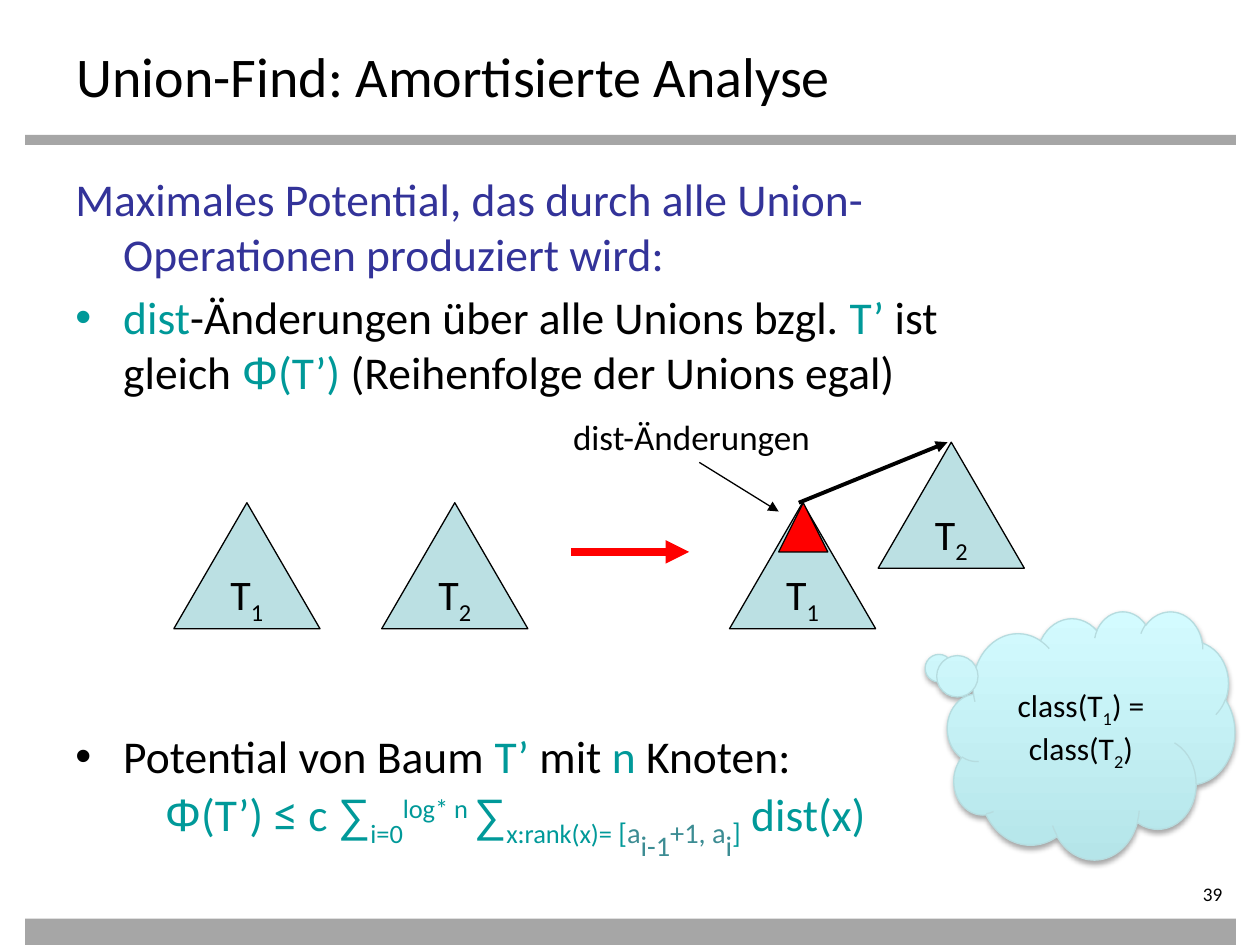
"""Build the union-find slide on amortised analysis."""
from lxml.etree import SubElement
from pptx import Presentation
from pptx.dml.color import RGBColor
from pptx.enum.shapes import MSO_CONNECTOR, MSO_SHAPE
from pptx.enum.text import MSO_ANCHOR, PP_ALIGN
from pptx.oxml import parse_xml
from pptx.oxml.ns import nsdecls, qn
from pptx.util import Inches, Pt

BLACK, TEAL, BLUE, GREY = "000000", "009999", "333399", "A6A6A6"
PALE, RED, SLATE = "BBE0E3", "FF0000", "3C8C93"


def rgb(value):
    return RGBColor.from_string(value)


def add_runs(p, runs, **base):
    for text, changes in runs:
        fmt = {"name": "Calibri", "size": 26, "color": BLACK, "baseline": 0} | base | changes
        r = p.add_run()
        r.text = text
        r.font.color.rgb = rgb(fmt.pop("color"))
        baseline = fmt.pop("baseline")
        if baseline:
            r._r.get_or_add_rPr().set("baseline", str(baseline * 1000))
        fmt["size"] = Pt(fmt["size"])
        for key, value in fmt.items():
            setattr(r.font, key, value)


prs = Presentation()
prs.slide_width, prs.slide_height = Inches(10), Inches(7.5)
s = prs.slides.add_slide(prs.slide_layouts[6])

for top, height in ((1.07, 0.08), (7.29, 0.21)):
    sp = s.shapes.add_shape(MSO_SHAPE.RECTANGLE, Inches(0.2), Inches(top), Inches(9.61), Inches(height))
    sp.shadow.inherit = False
    sp.fill.solid()
    sp.fill.fore_color.rgb = rgb(GREY)
    sp.line.fill.background()

teal, sub = {"color": TEAL}, {"baseline": -25}
symbol = teal | {"name": "Arial"}
small = teal | sub | {"size": 28}
index = small | {"color": SLATE}
deep = index | {"baseline": -50}

intro = [("Maximales Potential, das durch alle Union-Operationen produziert wird:", {"color": BLUE})]
changes = [
    ("dist", teal), ("-Änderungen über alle Unions bzgl. ", {}), ("T’ ", teal), ("ist gleich ", {}),
    ("Φ", symbol), ("(T’) ", teal), ("(Reihenfolge der Unions egal)", {}),
]
potential = [("Potential von Baum ", {}), ("T’ ", teal), ("mit ", {}), ("n ", teal), ("Knoten:", {})]
formula = [
    ("Φ", symbol), ("(T’) ", teal), ("≤", teal | {"size": 28}), (" c ", teal),
    ("∑", symbol), ("i=0", teal | sub), ("log* n ", teal | {"baseline": 30}),
    ("∑", symbol), ("x:rank(x)=", teal | sub), (" [", small), ("a", index), ("i-1", deep),
    ("+1, a", index), ("i", deep), ("]", small), (" dist(x)", teal),
]

# fields: margin, first-line indent, bullet colour, space before, runs
bodies = [
    (1.31, 2, [(0.38, -0.38, None, 0, intro), (0.38, -0.38, TEAL, 5.2, changes)]),
    (5.73, 1.2, [(0.38, -0.38, BLACK, 0, potential), (0.71, 0, None, 0, formula)]),
]
for top, height, paragraphs in bodies:
    tf = s.shapes.add_textbox(Inches(0.5), Inches(top), Inches(7.96), Inches(height)).text_frame
    tf.word_wrap = True
    for i, (margin, indent, bullet, before, runs) in enumerate(paragraphs):
        p = tf.add_paragraph() if i else tf.paragraphs[0]
        pPr = p._p.get_or_add_pPr()
        pPr.set("marL", str(Inches(margin)))
        pPr.set("indent", str(Inches(indent)))
        if bullet:
            SubElement(SubElement(pPr, qn("a:buClr")), qn("a:srgbClr")).set("val", bullet)
            SubElement(pPr, qn("a:buFont")).set("typeface", "Arial")
            SubElement(pPr, qn("a:buChar")).set("char", "•")
        p.space_before = Pt(before)
        add_runs(p, runs)

labels = [
    (0.51, 0.28, 9, 0.55, "Union-Find: Amortisierte Analyse", 32),
    (4.45, 3.25, 2.24, 0.43, "dist-Änderungen", 20),
]
for left, top, width, height, text, size in labels:
    tf = s.shapes.add_textbox(Inches(left), Inches(top), Inches(width), Inches(height)).text_frame
    tf.word_wrap = False
    add_runs(tf.paragraphs[0], [(text, {})], size=size)

tf = s.shapes.add_textbox(Inches(8.7), Inches(7), Inches(1.1), Inches(0.22)).text_frame
tf.word_wrap = True
tf.margin_left = tf.margin_top = tf.margin_bottom = 0
tf.paragraphs[0].alignment = PP_ALIGN.RIGHT
add_runs(tf.paragraphs[0], [("39", {})], size=11)

triangles = [
    (1.38, 3.99, 1.16, 1, PALE, "1"),
    (3.03, 3.99, 1.16, 1, PALE, "2"),
    (5.79, 3.99, 1.16, 1, PALE, "1"),
    (6.97, 3.51, 1.16, 1, PALE, "2"),
    (6.18, 3.99, 0.39, 0.39, RED, None),
]
for left, top, width, height, color, number in triangles:
    sp = s.shapes.add_shape(MSO_SHAPE.ISOSCELES_TRIANGLE, Inches(left), Inches(top), Inches(width), Inches(height))
    sp.shadow.inherit = False
    sp.fill.solid()
    sp.fill.fore_color.rgb = rgb(color)
    sp.line.color.rgb = rgb(BLACK)
    sp.line.width = Pt(0.75)
    if number:
        tf = sp.text_frame
        tf.word_wrap = False
        tf.vertical_anchor = MSO_ANCHOR.MIDDLE
        tf.paragraphs[0].alignment = PP_ALIGN.CENTER
        add_runs(tf.paragraphs[0], [("T", {}), (number, sub)], size=24)

arrows = [
    (6.34, 3.99, 7.52, 3.51, BLACK, 2.25),
    (4.53, 4.38, 5.47, 4.38, RED, 4.5),
    (5.55, 3.67, 6.18, 4.06, BLACK, 0.75),
]
for x1, y1, x2, y2, color, width in arrows:
    sp = s.shapes.add_connector(MSO_CONNECTOR.STRAIGHT, Inches(x1), Inches(y1), Inches(x2), Inches(y2))
    sp.line.color.rgb = rgb(color)
    sp.line.width = Pt(width)
    SubElement(sp.line._get_or_add_ln(), qn("a:tailEnd")).set("type", "triangle")
    SubElement(sp._element.spPr, qn("a:effectLst"))

sp = s.shapes.add_shape(MSO_SHAPE.CLOUD_CALLOUT, Inches(7.52), Inches(4.85), Inches(2.28), Inches(1.97))
sp.adjustments[0], sp.adjustments[1] = -0.55, -0.28
sp.fill.gradient()
sp.fill.gradient_angle = 90
for stop, position, color in zip(sp.fill.gradient_stops, (0, 1), ("B5E5E9", "D3FBFF")):
    stop.position = position
    stop.color.rgb = rgb(color)
sp.line.color.rgb = rgb("B6DCDF")
sp.line.width = Pt(0.75)
sp._element.spPr.append(parse_xml(
    f'<a:effectLst {nsdecls("a")}><a:outerShdw blurRad="{Pt(3.1)}" dist="{Pt(1.8)}" dir="5400000" '
    'rotWithShape="0"><a:srgbClr val="000000"><a:alpha val="35000"/></a:srgbClr></a:outerShdw></a:effectLst>'))
tf = sp.text_frame
tf.word_wrap = True
tf.vertical_anchor = MSO_ANCHOR.MIDDLE
tf.paragraphs[0].alignment = PP_ALIGN.CENTER
add_runs(tf.paragraphs[0], [("class(T", {}), ("1", sub), (") = class(T", {}), ("2", sub), (")", {})], size=18)

prs.save("out.pptx")
